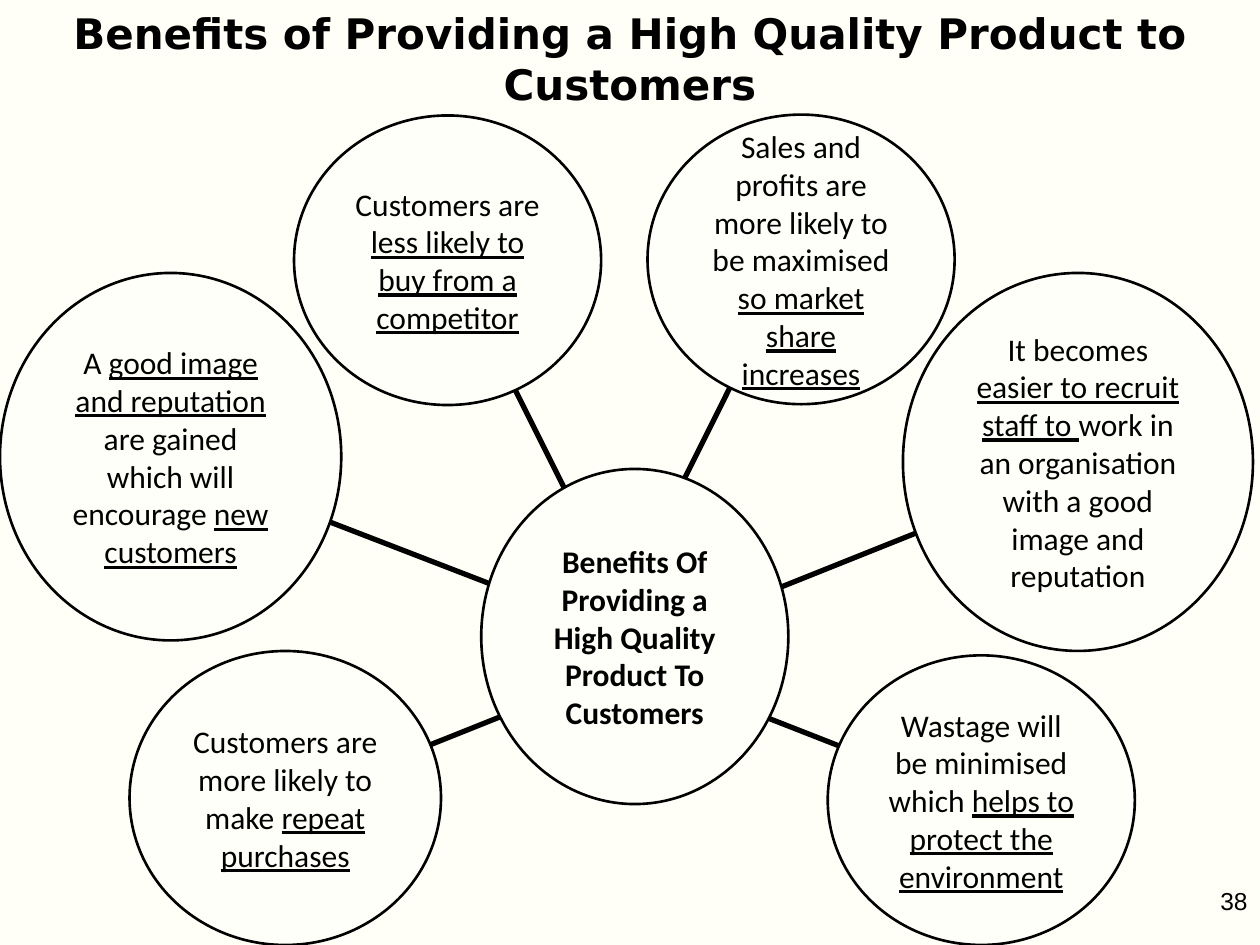
import pptx
import pptx.dml.color
import pptx.enum.shapes
import pptx.enum.text
import pptx.oxml.ns
import pptx.util
from lxml import etree

Pt = pptx.util.Pt
ALIGN = pptx.enum.text.PP_ALIGN
ANCHOR = pptx.enum.text.MSO_ANCHOR
COLORS = {"background": "FFFFF7", "bubble": "FFFFFA", "ink": "000000"}


def rgb(name):
    return pptx.dml.color.RGBColor.from_string(COLORS[name])


def write_text(tf, text, size=18, font="Calibri", bold=False,
               align=ALIGN.CENTER, anchor=ANCHOR.MIDDLE):
    """Fill a text frame; words between underscores are underlined."""
    tf.word_wrap = True
    tf.vertical_anchor = anchor
    p = tf.paragraphs[0]
    p.alignment = align
    for i, part in enumerate(text.split("_")):
        if not part:
            continue
        r = p.add_run()
        r.text = part
        r.font.size = Pt(size)
        r.font.name = font
        r.font.bold = bold
        r.font.underline = i % 2 == 1
        r.font.color.rgb = rgb("ink")


class SlideBuilder:
    """Holds the current slide and the line style of its shapes."""
    bubble_line = 1.5
    spoke_line = 3

    def __init__(self, prs):
        self.s = prs.slides.add_slide(prs.slide_layouts[6])
        fill = self.s.background.fill
        fill.solid()
        fill.fore_color.rgb = rgb("background")

    def text(self, box, text, **style):
        sp = self.s.shapes.add_textbox(*map(Pt, box))
        write_text(sp.text_frame, text, **style)

    def bubble(self, box, text, **style):
        sp = self.s.shapes.add_shape(
            pptx.enum.shapes.MSO_SHAPE.OVAL, *map(Pt, box))
        sp.shadow.inherit = False
        sp.fill.solid()
        sp.fill.fore_color.rgb = rgb("bubble")
        sp.line.color.rgb = rgb("ink")
        sp.line.width = Pt(self.bubble_line)
        write_text(sp.text_frame, text, **style)

    def spoke(self, start, end):
        cxn = self.s.shapes.add_connector(
            pptx.enum.shapes.MSO_CONNECTOR.STRAIGHT, *map(Pt, start + end))
        cxn.line.color.rgb = rgb("ink")
        cxn.line.width = Pt(self.spoke_line)
        etree.SubElement(cxn._element.spPr, pptx.oxml.ns.qn("a:effectLst"))


# Each benefit: spoke start, spoke end, bubble box, text
BENEFITS = [
    ((455, 145.5), (342, 372), (370, 65.5, 175.5, 165.5),
     "Sales and profits are more likely to be maximised "
     "_so market share increases_"),
    ((110, 268), (360, 364.5), (0, 156, 195, 210),
     "A _good image and reputation _are gained which will encourage "
     "_new customers_"),
    ((161, 459.5), (360, 380), (74, 372, 178, 168),
     "Customers are more likely to make _repeat purchases_"),
    ((564.5, 459.5), (360, 379.5), (473, 374.5, 175.5, 165.5),
     "Wastage will be minimised which "
     "_helps to protect the environment_"),
    ((615, 268), (360, 370), (516, 156, 200, 216),
     "It becomes _easier to recruit staff to _work in an organisation "
     "with a good image and reputation"),
    ((258.5, 151), (372, 378), (168, 66, 175.5, 165.5),
     "Customers are _less likely to buy from a competitor_"),
]


def main():
    prs = pptx.Presentation()
    prs.slide_width, prs.slide_height = Pt(720), Pt(540)
    slide = SlideBuilder(prs)

    slide.text((552, 502.5, 168, 37.5), "38", size=14, font="Arial",
               align=ALIGN.RIGHT, anchor=ANCHOR.TOP)
    for start, end, box, text in BENEFITS:
        slide.spoke(start, end)
        slide.bubble(box, text)
    slide.bubble((275, 268, 175.5, 191.5),
                 "Benefits Of Providing a High Quality Product To Customers",
                 bold=True)
    slide.text((0, 6, 720, 54.5),
               "Benefits of Providing a High Quality Product to Customers",
               size=24, font="DejaVu Sans", bold=True)
    prs.save("out.pptx")


if __name__ == "__main__":
    main()
